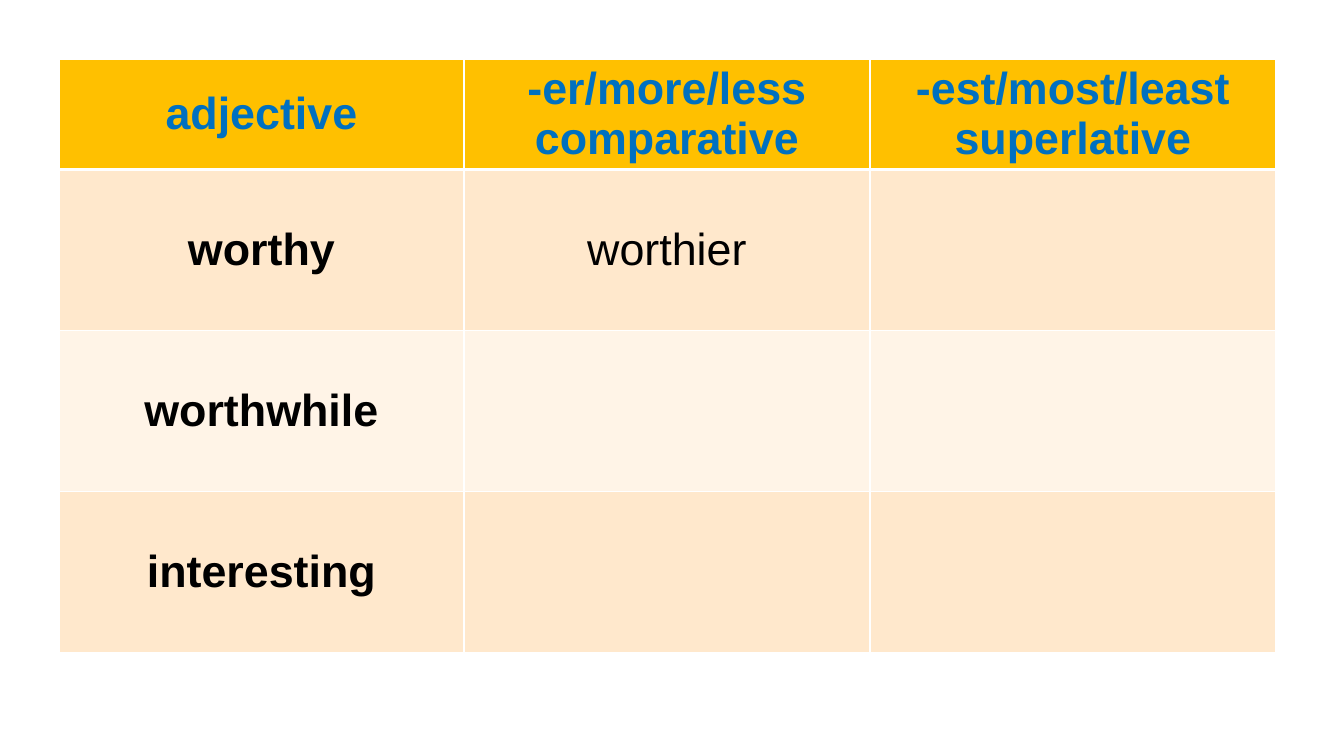
from lxml import etree
from pptx import Presentation
from pptx import util as u
from pptx.dml.color import RGBColor
from pptx.enum import text
from pptx.oxml import ns

PX = 914400 / 100.8
FONT = "Arial"
WHITE = RGBColor(0xFF, 0xFF, 0xFF)
BLACK = RGBColor(0x00, 0x00, 0x00)
BLUE = RGBColor(0x00, 0x70, 0xC0)
GOLD = RGBColor(0xFF, 0xC0, 0x00)
PEACH = RGBColor(0xFF, 0xE8, 0xCC)
CREAM = RGBColor(0xFF, 0xF4, 0xE7)

COLUMN_WIDTHS = [405, 406, 406]
ROW_HEIGHTS = [97, 161, 161, 161]
ADJECTIVES = [
    ["adjective", "-er/more/less\ncomparative", "-est/most/least\nsuperlative"],
    ["worthy", "worthier", ""],
    ["worthwhile", "", ""],
    ["interesting", "", ""],
]


def px(length):
    return u.Emu(round(length * PX))


def write(frame, words, size=32, color=BLACK, bold=False):
    """Fill a text frame with centred lines, one paragraph each."""
    frame.text = words
    for para in frame.paragraphs:
        para.alignment = text.PP_ALIGN.CENTER
        para.font.size = u.Pt(size)
        for span in para.runs:
            span.font.name = FONT
            span.font.size = u.Pt(size)
            span.font.bold = bold
            span.font.color.rgb = color


class Page:
    def __init__(self, deck):
        self.slide = deck.slides.add_slide(deck.slide_layouts[6])
        self.slide.background.fill.solid()
        self.slide.background.fill.fore_color.rgb = WHITE

    def border(self, cell, side, points):
        line = etree.Element(ns.qn(f"a:ln{side}"), w=str(u.Pt(points)))
        fill = etree.SubElement(line, ns.qn("a:solidFill"))
        etree.SubElement(fill, ns.qn("a:srgbClr"), val=str(WHITE))
        return line

    def table(self, left, top, widths, heights, rows):
        box = self.slide.shapes.add_table(
            len(rows), len(widths), px(left), px(top),
            px(sum(widths)), px(sum(heights)))
        grid = box.table
        for column, width in zip(grid.columns, widths):
            column.width = px(width)
        for row, height in zip(grid.rows, heights):
            row.height = px(height)
        for r, row in enumerate(rows):
            for c, words in enumerate(row):
                self.cell(grid.cell(r, c), words, r, c)

    def cell(self, cell, words, row, column):
        header = row == 0
        cell.vertical_anchor = text.MSO_ANCHOR.MIDDLE
        write(cell.text_frame, words, color=BLUE if header else BLACK,
              bold=header or column == 0)
        cell.fill.solid()
        cell.fill.fore_color.rgb = GOLD if header else (CREAM, PEACH)[row % 2]
        # Borders come before the fill; the header rule is thicker
        weights = {"L": 1, "R": 1, "T": 3 if row == 1 else 1, "B": 3 if header else 1}
        properties = cell._tc.get_or_add_tcPr()
        for place, (side, points) in enumerate(weights.items()):
            properties.insert(place, self.border(cell, side, points))


def main():
    deck = Presentation()
    deck.slide_width, deck.slide_height = px(1344), px(756)
    page = Page(deck)

    # Comparison table
    page.table(59, 59, COLUMN_WIDTHS, ROW_HEIGHTS, ADJECTIVES)

    deck.save("out.pptx")


if __name__ == "__main__":
    main()
